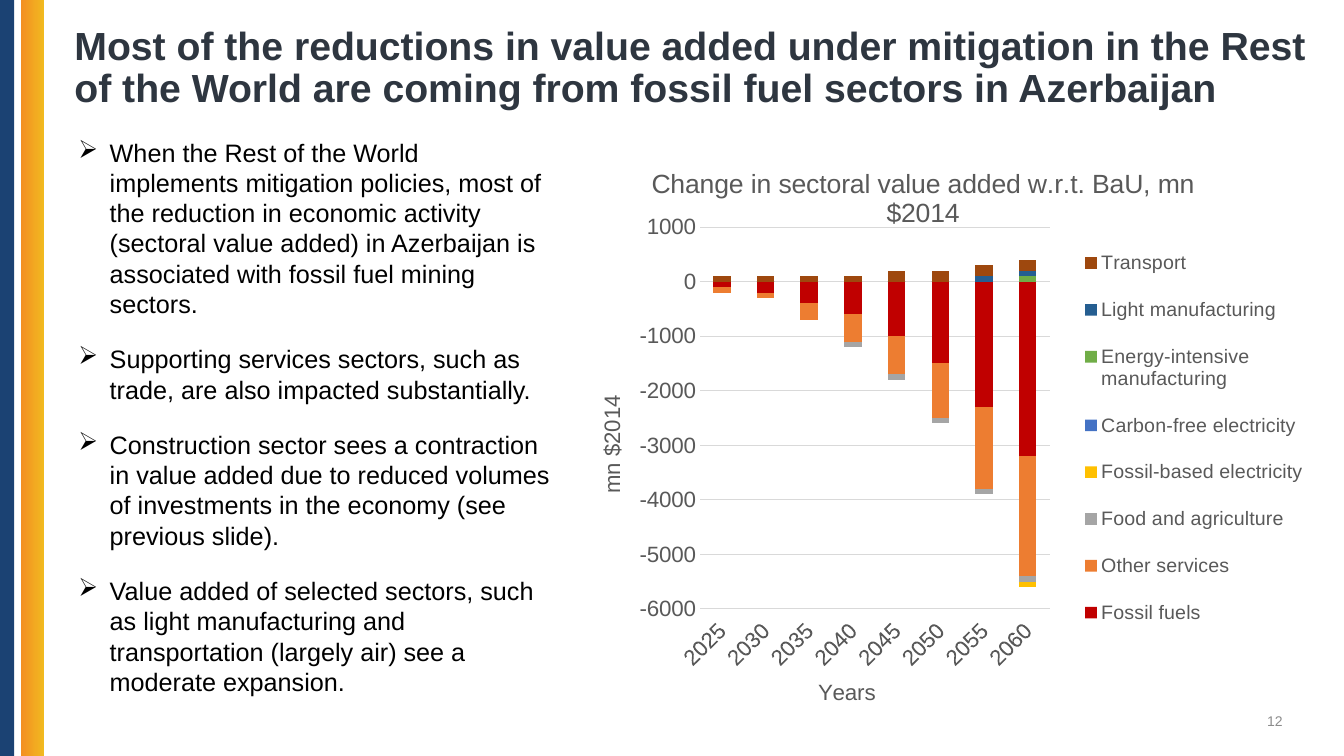
from dataclasses import dataclass

from lxml.etree import SubElement
from pptx import Presentation
from pptx.chart.data import CategoryChartData
from pptx.dml.color import RGBColor
from pptx.enum.chart import XL_CHART_TYPE, XL_LEGEND_POSITION, XL_TICK_LABEL_POSITION, XL_TICK_MARK
from pptx.enum.shapes import MSO_SHAPE
from pptx.enum.text import MSO_ANCHOR, PP_ALIGN
from pptx.oxml.ns import qn
from pptx.util import Inches, Pt

FONT = "Arial"
GREY = "595959"
LIGHT_GREY = "D9D9D9"


@dataclass
class Box:
    left: float
    top: float
    width: float
    height: float

    def lengths(self):
        return [Inches(v) for v in (self.left, self.top, self.width, self.height)]


@dataclass
class Sector:
    name: str
    color: str
    values: tuple


TITLE = ("Most of the reductions in value added under mitigation in the Rest of the World "
         "are coming from fossil fuel sectors in Azerbaijan")
FINDINGS = [
    "When the Rest of the World implements mitigation policies, most of the reduction in economic "
    "activity (sectoral value added) in Azerbaijan is associated with fossil fuel mining sectors.",
    "Supporting services sectors, such as trade, are also impacted substantially.",
    "Construction sector sees a contraction in value added due to reduced volumes of investments "
    "in the economy (see previous slide).",
    "Value added of selected sectors, such as light manufacturing and transportation (largely air) "
    "see a moderate expansion.",
]
YEARS = [str(year) for year in range(2025, 2061, 5)]
SECTORS = [
    Sector("Fossil fuels", "C00000", (-100, -200, -400, -600, -1000, -1500, -2300, -3200)),
    Sector("Other services", "ED7D31", (-100, -100, -300, -500, -700, -1000, -1500, -2200)),
    Sector("Food and agriculture", "A5A5A5", (0, 0, 0, -100, -100, -100, -100, -100)),
    Sector("Fossil-based electricity", "FFC000", (0, 0, 0, 0, 0, 0, 0, -100)),
    Sector("Carbon-free electricity", "4472C4", (0, 0, 0, 0, 0, 0, 0, 0)),
    Sector("Energy-intensive manufacturing", "70AD47", (0, 0, 0, 0, 0, 0, 0, 100)),
    Sector("Light manufacturing", "255E91", (0, 0, 0, 0, 0, 0, 100, 100)),
    Sector("Transport", "9E480E", (100, 100, 100, 100, 200, 200, 200, 200)),
]


def rgb(color: str) -> RGBColor:
    return RGBColor.from_string(color)


def style_font(font, size: float, color: str, bold: bool = False) -> None:
    font.name, font.size, font.bold = FONT, Pt(size), bold
    font.color.rgb = rgb(color)


def add_stripe(page, box: Box, colors: list[str]) -> None:
    """One color gives a solid fill, two give a left-to-right gradient."""
    stripe = page.shapes.add_shape(MSO_SHAPE.RECTANGLE, *box.lengths())
    stripe.shadow.inherit = False
    stripe.line.fill.background()
    if len(colors) == 1:
        stripe.fill.solid()
        stripe.fill.fore_color.rgb = rgb(colors[0])
        return
    stripe.fill.gradient()
    stripe.fill.gradient_angle = 0
    for stop, color in zip(stripe.fill.gradient_stops, colors):
        stop.color.rgb = rgb(color)


def add_text(page, box: Box, texts: list[str], size: float, color: str,
             bold: bool = False, anchor=MSO_ANCHOR.MIDDLE) -> list:
    frame = page.shapes.add_textbox(*box.lengths()).text_frame
    frame.word_wrap = True
    frame.vertical_anchor = anchor
    frame.text = "\n".join(texts)
    for para in frame.paragraphs:
        style_font(para.font, size, color, bold)
    return list(frame.paragraphs)


def add_bullet(para) -> None:
    para.space_before, para.space_after = Pt(6), Pt(12)
    properties = para._p.get_or_add_pPr()
    properties.set("marL", str(Inches(0.31)))
    properties.set("indent", str(-Inches(0.31)))
    bullet = properties.makeelement(qn("a:buChar"), {"char": "➢"})
    properties.insert_element_before(bullet, "a:tabLst", "a:defRPr", "a:extLst")


def place(element, **fractions: float) -> None:
    """Fix a chart part at x, y (and w, h) as fractions of the chart."""
    layout = element.find(qn("c:layout"))
    if layout is None:
        layout = element.makeelement(qn("c:layout"), {})
        overlay = element.find(qn("c:overlay"))
        if overlay is None:
            element.insert(0, layout)
        else:
            overlay.addprevious(layout)
    manual = SubElement(layout, qn("c:manualLayout"))
    if element.tag == qn("c:plotArea"):
        SubElement(manual, qn("c:layoutTarget"), val="inner")
    for key in ("x", "y"):
        SubElement(manual, qn(f"c:{key}Mode"), val="edge")
    for key, value in fractions.items():
        SubElement(manual, qn(f"c:{key}"), val=str(value))


def set_title(title, text: str, size: float, x: float, y: float, rotation: int = 0) -> None:
    title.text_frame.text = text
    style_font(title.text_frame.paragraphs[0].font, size, GREY)
    title._element.find(".//" + qn("a:bodyPr")).set("rot", str(rotation * 60000))
    place(title._element, x=x, y=y)


def style_axis(axis) -> None:
    axis.major_tick_mark = axis.minor_tick_mark = XL_TICK_MARK.NONE
    style_font(axis.tick_labels.font, 16, GREY)


def add_sector_chart(page, box: Box) -> None:
    data = CategoryChartData(number_format="0")
    data.categories = YEARS
    for sector in SECTORS:
        data.add_series(sector.name, sector.values)
    chart = page.shapes.add_chart(XL_CHART_TYPE.COLUMN_STACKED, *box.lengths(), data).chart
    style_font(chart.font, 16, "000000")
    set_title(chart.chart_title, "Change in sectoral value added w.r.t. BaU, mn $2014", 19, 0.12, 0.045)
    place(chart._chartSpace.chart.plotArea, x=0.19, y=0.16, w=0.46, h=0.67)

    plot = chart.plots[0]
    plot.gap_width, plot.overlap, plot.vary_by_categories = 150, 100, False
    for series, sector in zip(plot.series, SECTORS):
        series.invert_if_negative = False
        series.format.fill.solid()
        series.format.fill.fore_color.rgb = rgb(sector.color)

    years, values = chart.category_axis, chart.value_axis
    for axis in (years, values):
        style_axis(axis)
    years.tick_label_position = XL_TICK_LABEL_POSITION.LOW
    years._element.find(qn("c:txPr")).find(qn("a:bodyPr")).set("rot", str(-45 * 60000))
    set_title(years.axis_title, "Years", 16, 0.34, 0.945)
    set_title(values.axis_title, "mn $2014", 16, 0.05, 0.45, rotation=-90)
    values.minimum_scale, values.maximum_scale, values.major_unit = -6000, 1000, 1000
    values.tick_labels.number_format = "0"
    values.tick_labels.number_format_is_linked = False
    values.format.line.fill.background()
    for line in (years.format.line, values.major_gridlines.format.line):
        line.color.rgb = rgb(LIGHT_GREY)
        line.width = Pt(0.75)

    chart.has_legend = True
    chart.legend.position = XL_LEGEND_POSITION.RIGHT
    chart.legend.include_in_layout = False
    style_font(chart.legend.font, 14, GREY)
    place(chart.legend._element, x=0.68, y=0.16, w=0.32, h=0.74)


def main() -> None:
    deck = Presentation()
    deck.slide_width, deck.slide_height = Inches(13.33), Inches(7.5)
    page = deck.slides.add_slide(deck.slide_layouts[6])
    add_stripe(page, Box(0, 0, 0.14, 7.5), ["1B4273"])
    add_stripe(page, Box(0.21, 0, 0.23, 7.5), ["F38F22", "F1BA20"])
    [heading] = add_text(page, Box(0.64, 0.08, 12.85, 1.2), [TITLE], 28, "2E3640", bold=True)
    heading.line_spacing = 0.9
    [number] = add_text(page, Box(9.82, 6.95, 3, 0.4), ["12"], 10, "8C8C8C")
    number.alignment = PP_ALIGN.RIGHT
    for para in add_text(page, Box(0.68, 1.31, 4.91, 5.71), FINDINGS, 18, "000000", anchor=MSO_ANCHOR.TOP):
        add_bullet(para)
    add_sector_chart(page, Box(5.51, 1.35, 7.54, 5.71))
    deck.save("out.pptx")


if __name__ == "__main__":
    main()
